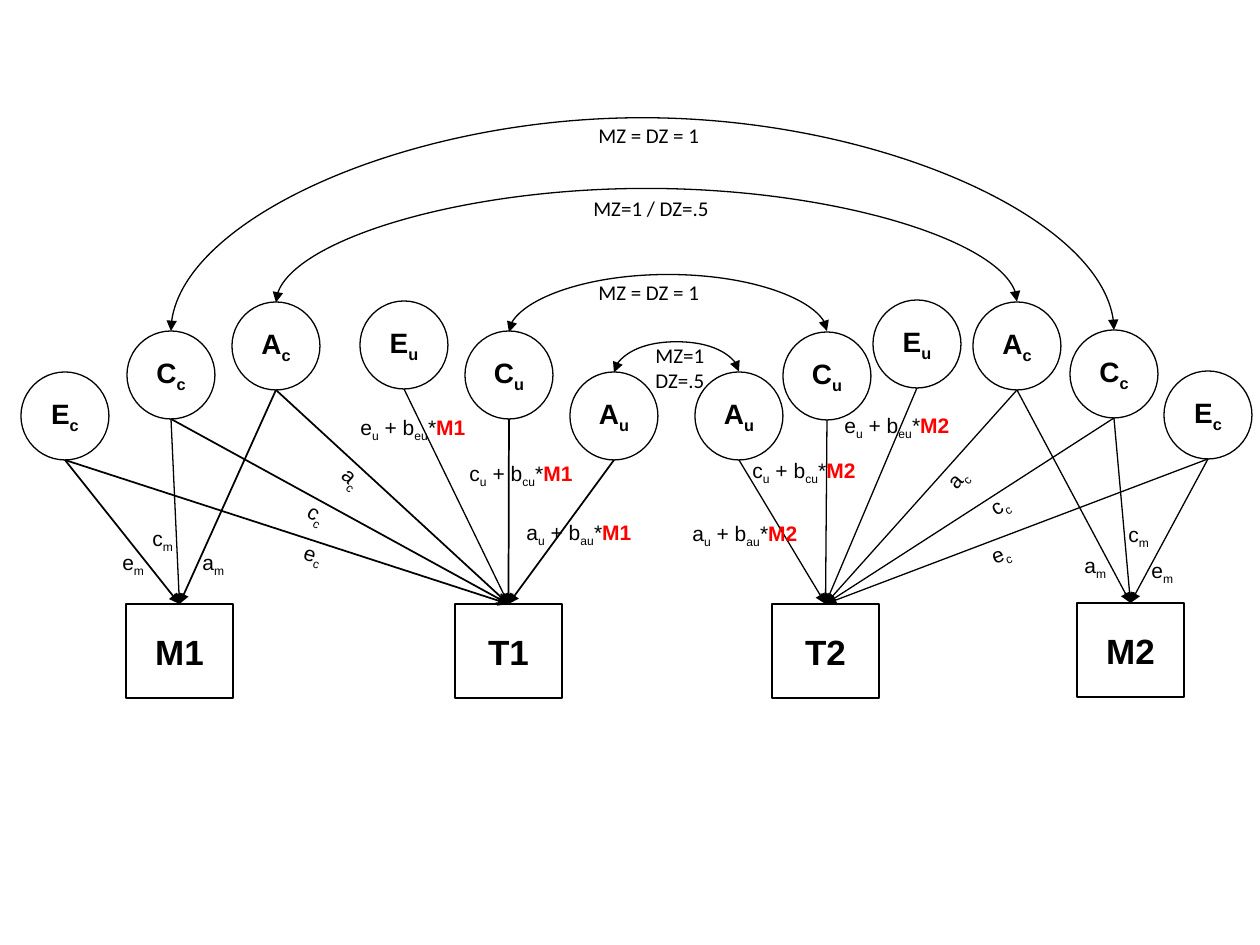
"""Build a twin path diagram with common and unique A, C and E factors."""
from lxml.etree import SubElement
from pptx import Presentation
from pptx.dml.color import RGBColor
from pptx.enum.shapes import MSO_CONNECTOR as LINK, MSO_SHAPE as SHAPE
from pptx.enum.text import MSO_ANCHOR, MSO_AUTO_SIZE, PP_ALIGN
from pptx.oxml.ns import qn
from pptx.util import Pt

PX = 914400 / 126
COLORS = {"ink": "000000", "paper": "FFFFFF", "moderator": "FF0000"}
CIRCLE, BOX_W, BOX_H, LABEL_H = 88, 107, 94, 38

BOXES = {"M1": (126, 604), "T1": (455, 604), "T2": (772, 604), "M2": (1077, 603)}
FACTORS = {
    "1": {"Ec": (21, 372), "Cc": (127, 331), "Ac": (232, 302),
          "Eu": (360, 301), "Cu": (465, 331), "Au": (570, 372)},
    "2": {"Au": (695, 372), "Cu": (783, 332), "Eu": (873, 300),
          "Ac": (973, 302), "Cc": (1070, 330), "Ec": (1164, 371)},
}
THIN_PATHS = {("Eu", "T1"), ("Cc", "M1")}
OPEN_HEADS = {("Cc", "T1")}
ARCS = [("Au", 31), ("Cu", 58), ("Cc", 215), ("Ac", 115)]

PATH_LABELS = [
    ("a", "m", 190, 543, 49, 0), ("c", "m", 140, 519, 48, 0), ("e", "m", 110, 543, 49, 0),
    ("a", "c", 330, 461, 50, 42.4), ("c", "c", 296, 495, 43, 30.6), ("e", "c", 292, 536, 50, 17.1),
    ("a", "m", 1072, 546, 49, 0), ("c", "m", 1116, 515, 48, 0), ("e", "m", 1139, 551, 49, 0),
    ("a", "c", 935, 459, 44, 312.1), ("c", "c", 978, 486, 43, 328.4), ("e", "c", 979, 534, 44, 339.2),
]
MODERATED_LABELS = [
    ("a", "M1", 514, 513, 135), ("c", "M1", 457, 454, 132), ("e", "M1", 348, 408, 135),
    ("a", "M2", 680, 514, 135), ("c", "M2", 740, 451, 132), ("e", "M2", 832, 406, 135),
]
ARC_LABELS = [
    (["MZ=1 / DZ=.5"], 581, 189, 141, 38), (["MZ=1", "DZ=.5"], 643, 336, 79, 63),
    (["MZ = DZ = 1"], 586, 116, 127, 38), (["MZ = DZ = 1"], 586, 273, 127, 38),
]


def emu(*lengths):
    return [round(length * PX) for length in lengths]


def color(name):
    return RGBColor.from_string(COLORS[name])


def add_span(para, text, size, font="Arial", bold=False, low=False, ink="ink"):
    span = para.add_run()
    span.text = text
    span.font.size, span.font.name, span.font.bold = Pt(size), font, bold
    span.font.color.rgb = color(ink)
    if low:
        span._r.get_or_add_rPr().set("baseline", "-25000")


def add_node(page, kind, x, y, width, height, name, low, size):
    node = page.shapes.add_shape(kind, *emu(x, y, width, height))
    node.shadow.inherit = False
    node.fill.solid()
    node.fill.fore_color.rgb = color("paper")
    node.line.color.rgb, node.line.width = color("ink"), Pt(0.75)
    frame = node.text_frame
    frame.word_wrap, frame.vertical_anchor = False, MSO_ANCHOR.MIDDLE
    para = frame.paragraphs[0]
    para.alignment = PP_ALIGN.CENTER
    add_span(para, name, size, bold=True)
    if low:
        add_span(para, low, size, bold=True, low=True)
    return node


def add_label(page, x, y, width, height=LABEL_H, turn=0):
    label = page.shapes.add_textbox(*emu(x, y, width, height))
    label.rotation = turn
    label.text_frame.word_wrap = False
    label.text_frame.auto_size = MSO_AUTO_SIZE.SHAPE_TO_FIT_TEXT
    return label.text_frame


def style_link(link, weight, **ends):
    link.line.color.rgb, link.line.width = color("ink"), Pt(weight)
    line = link.line._get_or_add_ln()
    for end, kind in ends.items():
        SubElement(line, qn(f"a:{end}"), type=kind)
    SubElement(link._element.spPr, qn("a:effectLst"))


def add_path(page, circle, box, weight, head):
    start = circle.left + circle.width // 2, circle.top + circle.height
    link = page.shapes.add_connector(LINK.STRAIGHT, *start, *start)
    link.end_connect(box, 0)
    style_link(link, weight, tailEnd=head)


def add_arc(page, first, last, rise):
    link = page.shapes.add_connector(LINK.CURVE, 0, 0, 0, 0)
    link.begin_connect(first, 0)
    link.end_connect(last, 0)
    span, thin = last.left - first.left, round(PX)
    link.left = first.left + (first.width + span - thin) // 2
    link.top = (first.top + last.top - span) // 2
    link.width, link.height = thin, span
    frame = link._element.spPr.find(qn("a:xfrm"))
    frame.set("rot", str(270 * 60000))
    for flip in ("flipH", "flipV"):
        frame.attrib.pop(flip, None)
    adjust = link._element.spPr.find(qn("a:prstGeom")).get_or_add_avLst()
    SubElement(adjust, qn("a:gd"), name="adj1", fmla=f"val {rise * 100000}")
    style_link(link, 0.75, headEnd="triangle", tailEnd="triangle")


def main():
    deck = Presentation()
    deck.slide_width, deck.slide_height = emu(1260, 945)
    page = deck.slides.add_slide(deck.slide_layouts[6])

    boxes = {name: add_node(page, SHAPE.RECTANGLE, x, y, BOX_W, BOX_H, name, "", 20)
             for name, (x, y) in BOXES.items()}
    circles = {twin: {name: add_node(page, SHAPE.OVAL, x, y, CIRCLE, CIRCLE, name[0], name[1], 16)
                      for name, (x, y) in group.items()}
               for twin, group in FACTORS.items()}

    for twin, group in circles.items():
        for name, circle in group.items():
            for trait in "MT" if name[1] == "c" else "T":
                route = name, trait + twin
                weight = 0.75 if twin == "2" or route in THIN_PATHS else 1
                head = "arrow" if route in OPEN_HEADS else "triangle"
                add_path(page, circle, boxes[trait + twin], weight, head)
    for name, rise in ARCS:
        add_arc(page, circles["1"][name], circles["2"][name], rise)

    for letter, low, x, y, width, turn in PATH_LABELS:
        para = add_label(page, x, y, width, turn=turn).paragraphs[0]
        add_span(para, letter, 12)
        add_span(para, low, 12, low=True)
    for letter, moderator, x, y, width in MODERATED_LABELS:
        para = add_label(page, x, y, width).paragraphs[0]
        for text, low in ((letter, False), ("u", True), (" + b", False),
                          (letter + "u", True), ("*", False)):
            add_span(para, text, 12, low=low)
        add_span(para, moderator, 12, bold=True, ink="moderator")
    for lines, *place in ARC_LABELS:
        frame = add_label(page, *place)
        for index, text in enumerate(lines):
            para = frame.add_paragraph() if index else frame.paragraphs[0]
            add_span(para, text, 12, font="Calibri")

    deck.save("out.pptx")


if __name__ == "__main__":
    main()
